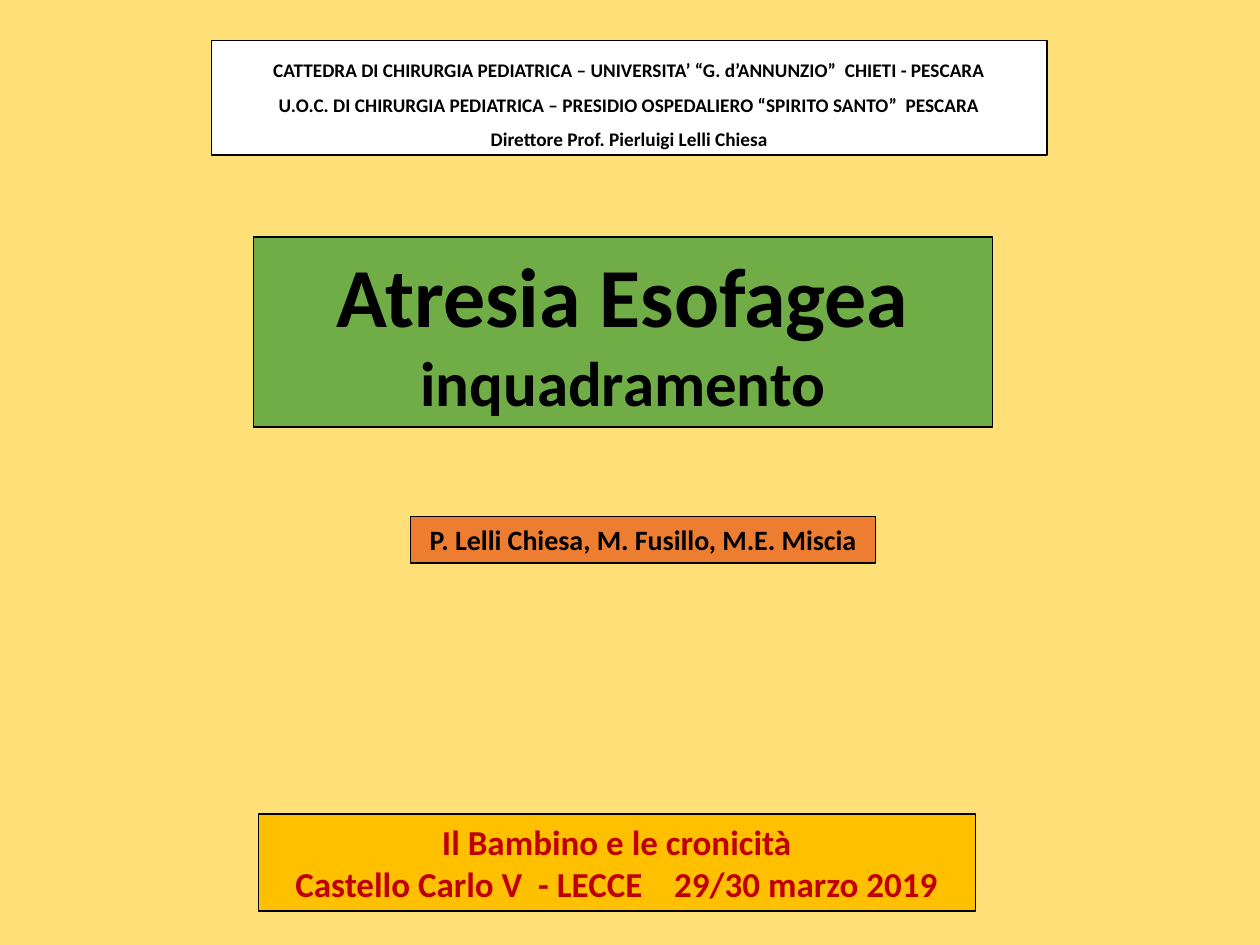
"""Build the title slide of a talk on esophageal atresia."""
from pptx import Presentation
from pptx.dml.color import RGBColor
from pptx.enum.shapes import MSO_SHAPE
from pptx.enum.text import MSO_ANCHOR, MSO_AUTO_SIZE, PP_ALIGN
from pptx.util import Inches, Pt

RECTANGLE = MSO_SHAPE.RECTANGLE
TOP = MSO_ANCHOR.TOP
GROW = MSO_AUTO_SIZE.SHAPE_TO_FIT_TEXT
CENTER = PP_ALIGN.CENTER

THEME = {
    "font": "Calibri",
    "background": "FFDF77",
    "outline": "000000",
    "outline_width": 0.75,
    "institution": {"fill": "FFFFFF", "text": "000000", "sizes": (11, 11, 11), "spacing": 1.5},
    "title": {"fill": "70AD47", "text": "000000", "sizes": (48, 36), "spacing": 1.0},
    "authors": {"fill": "ED7D31", "text": "000000", "sizes": (16,), "spacing": 1.0},
    "event": {"fill": "FFC000", "text": "C00000", "sizes": (20, 20), "spacing": 1.0},
}

PANELS = [
    ("institution", (1.68, 0.32, 6.63, 0.91), [
        "CATTEDRA DI CHIRURGIA PEDIATRICA – UNIVERSITA’ “G. d’ANNUNZIO”  CHIETI - PESCARA",
        "U.O.C. DI CHIRURGIA PEDIATRICA – PRESIDIO OSPEDALIERO “SPIRITO SANTO”  PESCARA",
        "Direttore Prof. Pierluigi Lelli Chiesa",
    ]),
    ("title", (2.01, 1.88, 5.87, 1.51), ["Atresia Esofagea", "inquadramento"]),
    ("authors", (3.26, 4.1, 3.69, 0.37), ["P. Lelli Chiesa, M. Fusillo, M.E. Miscia"]),
    ("event", (2.05, 6.46, 5.69, 0.77), [
        "Il Bambino e le cronicità",
        "Castello Carlo V  - LECCE    29/30 marzo 2019",
    ]),
]


def add_panel(slide, role, bounds, lines):
    """Add one outlined panel with centred bold lines."""
    style = THEME[role]
    panel = slide.shapes.add_shape(RECTANGLE, *map(Inches, bounds))
    panel.shadow.inherit = False
    panel.fill.solid()
    panel.fill.fore_color.rgb = RGBColor.from_string(style["fill"])
    panel.line.color.rgb = RGBColor.from_string(THEME["outline"])
    panel.line.width = Pt(THEME["outline_width"])
    frame = panel.text_frame
    frame.word_wrap = True
    frame.auto_size = GROW
    frame.vertical_anchor = TOP
    for index, (line, size) in enumerate(zip(lines, style["sizes"])):
        paragraph = frame.add_paragraph() if index else frame.paragraphs[0]
        paragraph.text = line
        paragraph.alignment = CENTER
        paragraph.line_spacing = style["spacing"]
        paragraph.font.name = THEME["font"]
        paragraph.font.size = Pt(size)
        paragraph.font.bold = True
        paragraph.font.color.rgb = RGBColor.from_string(style["text"])


def main():
    """Create the slide and save it."""
    deck = Presentation()
    deck.slide_width, deck.slide_height = Inches(10), Inches(7.5)
    slide = deck.slides.add_slide(deck.slide_layouts[6])
    slide.background.fill.solid()
    slide.background.fill.fore_color.rgb = RGBColor.from_string(THEME["background"])
    for role, bounds, lines in PANELS:
        add_panel(slide, role, bounds, lines)
    deck.save("out.pptx")


if __name__ == "__main__":
    main()
